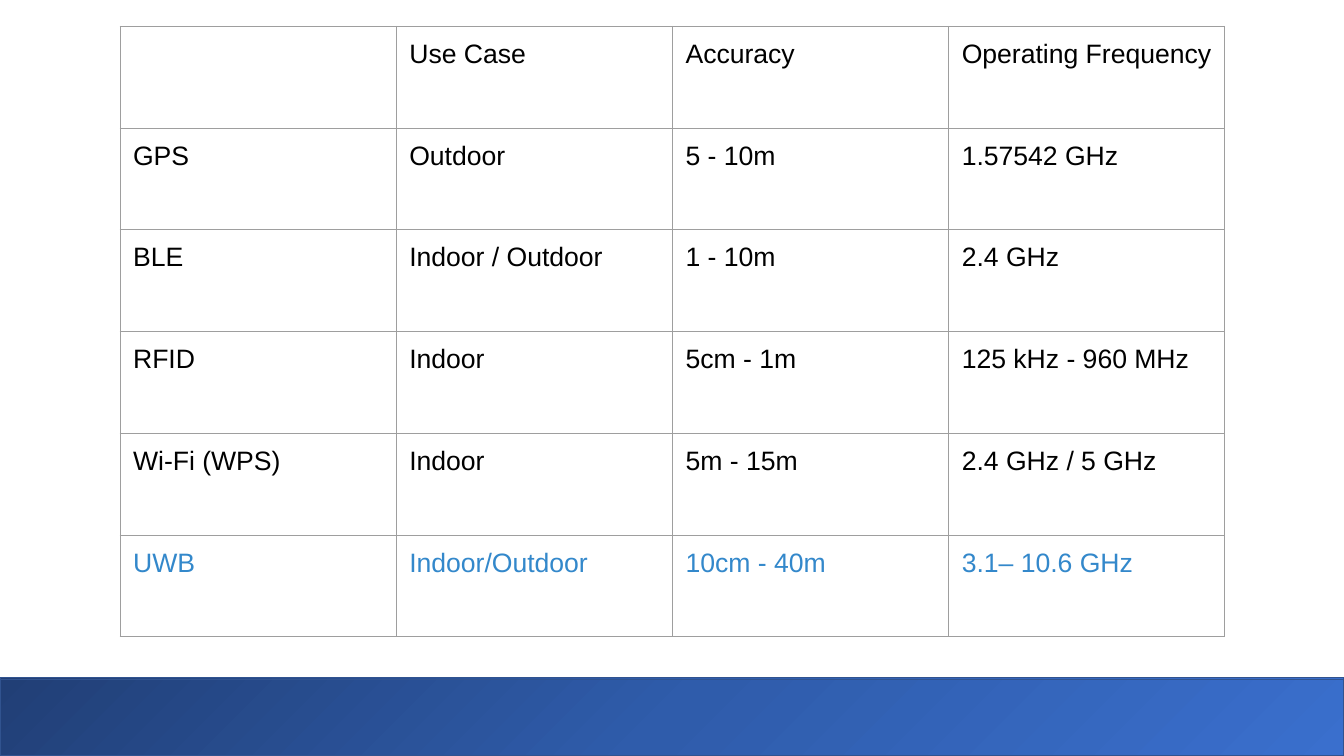
from copy import deepcopy

from lxml.etree import SubElement
from pptx import Presentation
from pptx.dml.color import RGBColor
from pptx.enum.shapes import MSO_SHAPE as Shape
from pptx.oxml.ns import qn
from pptx.util import Inches, Pt

COLORS = {
    "text": "000000",
    "highlight": "3388CB",
    "grid": "9E9E9E",
    "band_line": "31538F",
    "band_dark": "213F76",
    "band_middle": "2F5CAB",
    "band_light": "3A6FCD",
}
BAND_STOPS = [(0, "band_dark"), (0.5, "band_middle"), (1, "band_light")]
TECHNOLOGIES = [
    ["", "Use Case", "Accuracy", "Operating Frequency"],
    ["GPS", "Outdoor", "5 - 10m", "1.57542 GHz"],
    ["BLE", "Indoor / Outdoor", "1 - 10m", "2.4 GHz"],
    ["RFID", "Indoor", "5cm - 1m", "125 kHz - 960 MHz"],
    ["Wi-Fi (WPS)", "Indoor", "5m - 15m", "2.4 GHz / 5 GHz"],
    ["UWB", "Indoor/Outdoor", "10cm - 40m", "3.1– 10.6 GHz"],
]


def rgb(name):
    return RGBColor.from_string(COLORS[name])


class SlideBuilder:
    font_name = "Arial"
    font_size = Pt(19)
    cell_margin = Inches(0.13)
    grid_width = Pt(0.75)

    def __init__(self, slide):
        self.slide = slide

    def add_band(self, top):
        """Add a full-width bar with a diagonal three-stop gradient."""
        band = self.slide.shapes.add_shape(
            Shape.RECTANGLE, 0, Inches(top), Inches(13.33), Inches(0.76))
        band.shadow.inherit = False
        band.line.color.rgb = rgb("band_line")
        band.line.width = Pt(1)
        band.fill.gradient()
        band.fill.gradient_angle = 315
        stop_list = band._element.spPr.find(".//" + qn("a:gsLst"))
        stop_list.append(deepcopy(stop_list[0]))
        for stop, (position, color) in zip(band.fill.gradient_stops, BAND_STOPS):
            stop.position = position
            stop.color.rgb = rgb(color)

    def add_table(self, rows, left, top, column_width, row_height):
        """Add a plain grid whose last row is highlighted."""
        column_count = len(rows[0])
        table = self.slide.shapes.add_table(
            len(rows), column_count, Inches(left), Inches(top),
            Inches(column_width * column_count),
            Inches(row_height * len(rows))).table
        table.first_row = False
        table.horz_banding = False
        for row_index, values in enumerate(rows):
            color = "highlight" if row_index == len(rows) - 1 else "text"
            for column_index, text in enumerate(values):
                self.format_cell(table.cell(row_index, column_index), text, color)

    def format_cell(self, cell, text, color):
        cell.margin_left = cell.margin_right = self.cell_margin
        cell.margin_top = cell.margin_bottom = self.cell_margin
        self.add_borders(cell)
        cell.fill.background()
        if text:
            run = cell.text_frame.paragraphs[0].add_run()
            run.text = text
            run.font.name = self.font_name
            run.font.size = self.font_size
            run.font.color.rgb = rgb(color)

    def add_borders(self, cell):
        properties = cell._tc.get_or_add_tcPr()
        for side in ("lnL", "lnR", "lnT", "lnB"):
            border = SubElement(properties, qn("a:" + side), w=str(self.grid_width))
            fill = SubElement(border, qn("a:solidFill"))
            SubElement(fill, qn("a:srgbClr"), val=COLORS["grid"])


def main():
    presentation = Presentation()
    presentation.slide_width = Inches(13.33)
    presentation.slide_height = Inches(7.5)
    blank_layout = presentation.slide_layouts[6]
    builder = SlideBuilder(presentation.slides.add_slide(blank_layout))
    builder.add_band(top=6.72)
    builder.add_table(TECHNOLOGIES, left=1.19, top=0.26,
                      column_width=2.74, row_height=1.01)
    builder.add_band(top=6.74)
    presentation.save("out.pptx")


if __name__ == "__main__":
    main()
